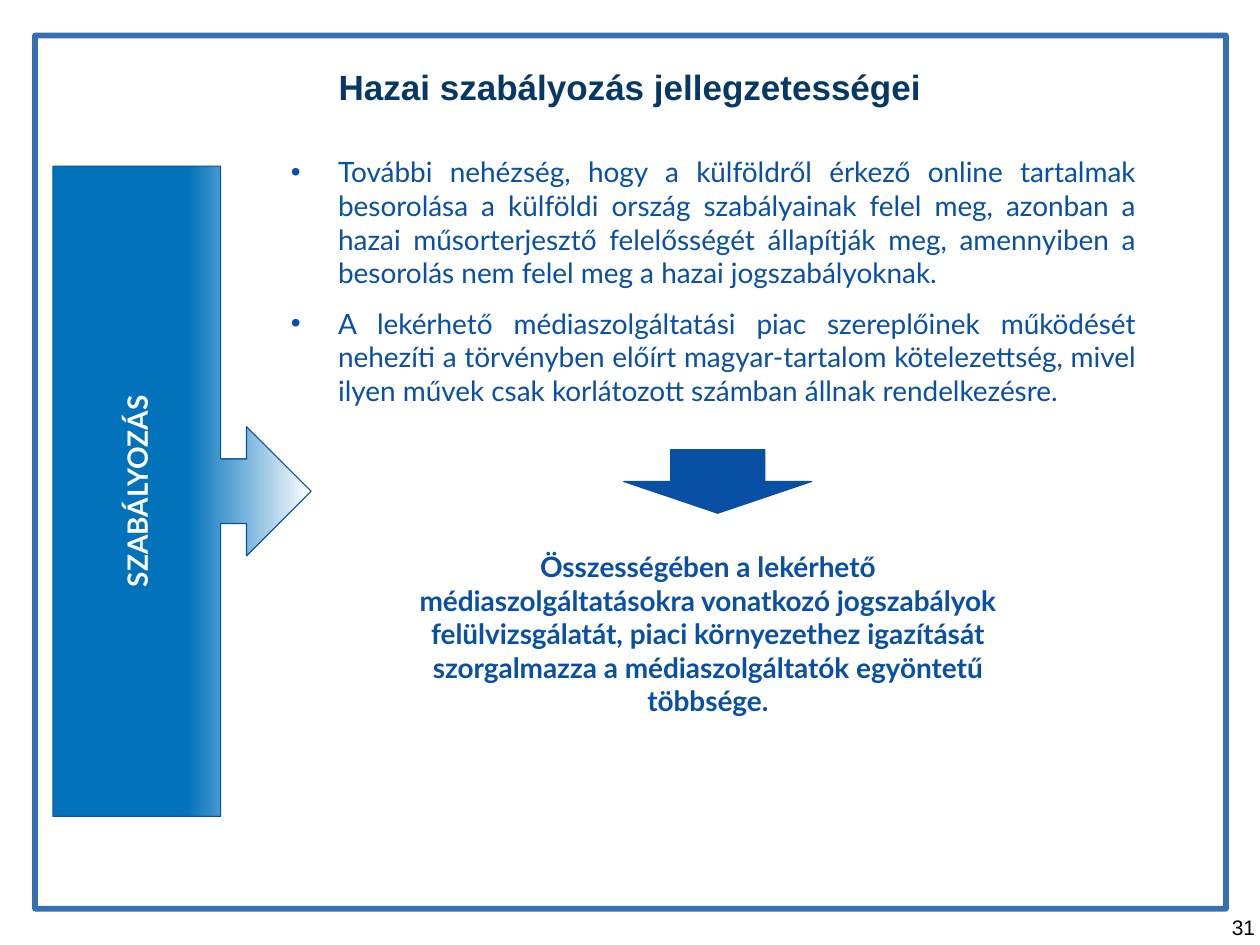
from dataclasses import dataclass

from lxml import etree
from pptx import Presentation
from pptx import util as u
from pptx.dml.color import RGBColor
from pptx.enum import shapes, text
from pptx.oxml.ns import qn

TITLE_ONLY = 5
SHAPE = shapes.MSO_SHAPE
ALIGN = text.PP_ALIGN
MIDDLE = text.MSO_ANCHOR.MIDDLE


@dataclass(frozen=True)
class Theme:
    blue: str = "094FA3"
    callout: str = "0272BB"
    navy: str = "073763"
    white: str = "FFFFFF"
    black: str = "000000"
    heading_font: str = "Arial"
    body_font: str = "Lato"
    title_size: float = 20
    body_size: float = 16
    number_size: float = 12
    frame_line: float = 3.25
    thin_line: float = 0.63


class SlideBuilder:
    """Holds the theme and the current slide; all lengths are points."""

    def __init__(self, slide, theme):
        self.slide = slide
        self.theme = theme

    def add_run(self, paragraph, wording, font, size, color, bold=False):
        run = paragraph.add_run()
        run.text = wording
        run.font.name = font
        run.font.size = u.Pt(size)
        run.font.bold = bold
        run.font.color.rgb = RGBColor.from_string(color)

    def title(self, wording, left, top, width, height):
        shape = self.slide.shapes.title
        shape.left, shape.top = u.Pt(left), u.Pt(top)
        shape.width, shape.height = u.Pt(width), u.Pt(height)
        shape.text_frame.vertical_anchor = MIDDLE
        paragraph = shape.text_frame.paragraphs[0]
        paragraph.alignment = ALIGN.CENTER
        self.add_run(paragraph, wording, self.theme.heading_font,
                     self.theme.title_size, self.theme.navy, True)

    def shape(self, kind, left, top, width, height, line_width, fill=None):
        shape = self.slide.shapes.add_shape(
            kind, *(u.Pt(value) for value in (left, top, width, height)))
        shape.shadow.inherit = False
        shape.line.color.rgb = RGBColor.from_string(self.theme.blue)
        shape.line.width = u.Pt(line_width)
        if fill:
            shape.fill.solid()
            shape.fill.fore_color.rgb = RGBColor.from_string(fill)
        else:
            shape.fill.background()
        return shape

    def frame(self, left, top, width, height, opacity):
        shape = self.shape(SHAPE.RECTANGLE, left, top, width, height,
                           self.theme.frame_line)
        color = shape.line._ln.find(".//" + qn("a:srgbClr"))
        etree.SubElement(color, qn("a:alpha"), val=str(opacity * 1000))

    def callout(self, wording, left, top, width, height):
        theme = self.theme
        shape = self.shape(SHAPE.RIGHT_ARROW_CALLOUT, left, top, width, height,
                           theme.thin_line)
        shape.fill.gradient()
        shape.fill.gradient_angle = 0
        stops = ((0.52, theme.callout), (1, theme.white))
        for stop, (position, color) in zip(shape.fill.gradient_stops, stops):
            stop.position = position
            stop.color.rgb = RGBColor.from_string(color)
        frame = shape.text_frame
        frame.vertical_anchor = MIDDLE
        frame._txBody.bodyPr.set("vert", "vert270")
        paragraph = frame.paragraphs[0]
        paragraph.alignment = ALIGN.CENTER
        self.add_run(paragraph, wording, theme.body_font, theme.body_size,
                     theme.white, True)

    def text_box(self, left, top, width, height, right_inset=0):
        box = self.slide.shapes.add_textbox(
            *(u.Pt(value) for value in (left, top, width, height)))
        box.text_frame.word_wrap = True
        box.text_frame.margin_right = u.Pt(right_inset)
        return box.text_frame

    def body(self, wordings, left, top, width, height, bullets=False):
        theme = self.theme
        frame = self.text_box(left, top, width, height)
        for index, wording in enumerate(wordings):
            paragraph = frame.add_paragraph() if index else frame.paragraphs[0]
            paragraph.alignment = ALIGN.JUSTIFY if bullets else ALIGN.CENTER
            if bullets:
                self.bullet(paragraph, 27)
            paragraph.space_before = u.Pt(3.6 if index else 0)
            paragraph.space_after = u.Pt(6)
            self.add_run(paragraph, wording, theme.body_font, theme.body_size,
                         theme.blue, not bullets)

    def bullet(self, paragraph, indent):
        properties = paragraph._p.get_or_add_pPr()
        properties.set("marL", str(u.Pt(indent)))
        properties.set("indent", str(-u.Pt(indent)))
        etree.SubElement(properties, qn("a:buFont"), typeface=self.theme.heading_font)
        etree.SubElement(properties, qn("a:buChar"), char="•")

    def slide_number(self, number, left, top, width, height):
        frame = self.text_box(left, top, width, height, right_inset=7.2)
        paragraph = frame.paragraphs[0]
        paragraph.alignment = ALIGN.RIGHT
        self.add_run(paragraph, number, self.theme.heading_font,
                     self.theme.number_size, self.theme.black)


def main():
    presentation = Presentation()
    presentation.slide_width, presentation.slide_height = u.Pt(720), u.Pt(540)
    slide = presentation.slides.add_slide(presentation.slide_layouts[TITLE_ONLY])
    theme = Theme()
    builder = SlideBuilder(slide, theme)

    # Frame, page number and title
    builder.frame(20, 20.3, 680.6, 499, opacity=81)
    builder.slide_number("31", 676.8, 519.1, 47.5, 19.4)
    builder.title("Hazai szabályozás jellegzetességei", 36, 21.6, 648, 55.5)

    # Topic callout
    builder.callout("SZABÁLYOZÁS", 30.2, 95, 147.6, 371.5)

    # Findings
    builder.body([
        "További nehézség, hogy a külföldről érkező online tartalmak besorolása "
        "a külföldi ország szabályainak felel meg, azonban a hazai "
        "műsorterjesztő felelősségét állapítják meg, amennyiben a besorolás nem "
        "felel meg a hazai jogszabályoknak.",
        "A lekérhető médiaszolgáltatási piac szereplőinek működését nehezíti a "
        "törvényben előírt magyar-tartalom kötelezettség, mivel ilyen művek "
        "csak korlátozott számban állnak rendelkezésre.",
    ], 159.1, 85, 490.3, 345.6, bullets=True)

    # Conclusion
    builder.shape(SHAPE.DOWN_ARROW, 356.4, 257, 107.5, 36.3,
                  theme.thin_line, theme.blue)
    builder.body([
        "Összességében a lekérhető médiaszolgáltatásokra vonatkozó jogszabályok "
        "felülvizsgálatát, piaci környezethez igazítását szorgalmazza a "
        "médiaszolgáltatók egyöntetű többsége.",
    ], 226.8, 310.5, 348.5, 112.3)

    presentation.save("out.pptx")


if __name__ == "__main__":
    main()
